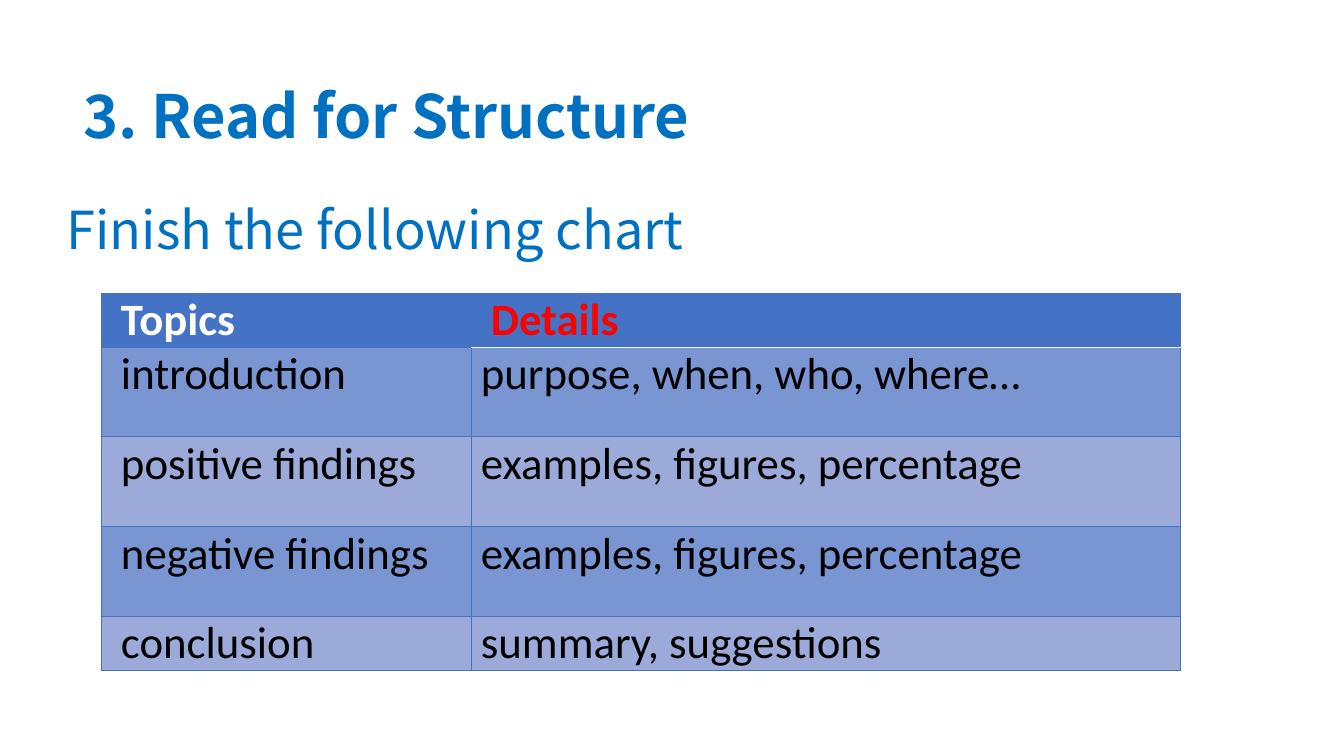
import pptx
import pptx.dml.color
import pptx.enum.text
import pptx.oxml.ns
import pptx.util
from lxml import etree

Inches = pptx.util.Inches
Pt = pptx.util.Pt
Align = pptx.enum.text.PP_ALIGN
Anchor = pptx.enum.text.MSO_ANCHOR

COLORS = {
    "heading": "0070C0",
    "header": "4472C4",
    "dark_row": "7995D2",
    "light_row": "9BAAD9",
    "white": "FFFFFF",
    "black": "000000",
    "red": "FF0000",
}
HEADING_FONT = "Noto Sans CJK SC"
TABLE_FONT = "Calibri"
ROWS = [
    ("Topics", "Details"),
    ("introduction", "purpose, when, who, where…"),
    ("positive findings", "examples, figures, percentage"),
    ("negative findings", "examples, figures, percentage"),
    ("conclusion", "summary, suggestions"),
]
COLUMN_WIDTHS = (3.67, 7.04)
ROW_HEIGHTS = (0.53, 0.89, 0.89, 0.89, 0.53)


def color(name):
    """Return the named colour."""
    return pptx.dml.color.RGBColor.from_string(COLORS[name])


def write(frame, text, font, size, color_name, bold, align):
    """Fill a text frame with one formatted paragraph and return it."""
    frame.text = text
    para = frame.paragraphs[0]
    para.alignment = align
    span = para.runs[0]
    span.font.name = font
    span.font.size = Pt(size)
    span.font.bold = bold
    span.font.color.rgb = color(color_name)
    return para


def add_heading(page):
    """Place and format the slide title."""
    title = page.shapes.title
    title.left, title.top = Inches(0.73), Inches(0.73)
    title.width, title.height = Inches(9.87), Inches(0.82)
    frame = title.text_frame
    frame.vertical_anchor = Anchor.MIDDLE
    para = write(frame, "3. Read for Structure", HEADING_FONT, 42.6, "heading", True, Align.LEFT)
    para.space_before = Pt(0)


def add_instruction(page):
    """Add the task line under the title."""
    box = page.shapes.add_textbox(Inches(-0.26), Inches(1.97), Inches(12.49), Inches(0.66))
    frame = box.text_frame
    frame.word_wrap = True
    frame.margin_left = Inches(0.92)
    para = write(frame, "Finish the following chart", HEADING_FONT, 37.4, "heading", False, Align.LEFT)
    para.line_spacing = Pt(40)
    para.space_before = Pt(6)


def add_border(cell, side, color_name, width):
    """Draw one side of a cell's border."""
    qn = pptx.oxml.ns.qn
    properties = cell._tc.get_or_add_tcPr()
    line = etree.SubElement(properties, qn(f"a:ln{side}"), w=str(Pt(width)))
    fill = etree.SubElement(line, qn("a:solidFill"))
    etree.SubElement(fill, qn("a:srgbClr"), val=COLORS[color_name])


def format_cell(cell, row, column):
    """Write a table cell and set its margins, borders and fill."""
    is_header = row == 0
    text_color = ("white", "red")[column] if is_header else "black"
    write(cell.text_frame, ROWS[row][column], TABLE_FONT, 32, text_color, is_header, Align.JUSTIFY)
    cell.margin_left = Inches(0.2 if is_header or column == 0 else 0.1)
    cell.margin_right = Inches(0.1)
    cell.margin_top = cell.margin_bottom = 0
    white_side = {0: "B", 1: "T"}.get(row) if column == 1 else None
    for side in "LRTB":
        style = ("white", 1) if side == white_side else ("header", 0.5)
        add_border(cell, side, *style)
    cell.fill.solid()
    row_color = "dark_row" if row % 2 else "light_row"
    cell.fill.fore_color.rgb = color("header" if is_header else row_color)


def add_structure_table(page):
    """Add the table of topics and details."""
    frame = page.shapes.add_table(
        len(ROWS), len(COLUMN_WIDTHS), Inches(1), Inches(2.91),
        Inches(sum(COLUMN_WIDTHS)), Inches(sum(ROW_HEIGHTS)))
    table = frame.table
    for column, width in enumerate(COLUMN_WIDTHS):
        table.columns[column].width = Inches(width)
    for row, height in enumerate(ROW_HEIGHTS):
        table.rows[row].height = Inches(height)
        for column in range(len(COLUMN_WIDTHS)):
            format_cell(table.cell(row, column), row, column)


def main():
    """Build the slide and save the deck."""
    deck = pptx.Presentation()
    deck.slide_width, deck.slide_height = Inches(13.33), Inches(7.5)
    page = deck.slides.add_slide(deck.slide_layouts[5])
    add_heading(page)
    add_instruction(page)
    add_structure_table(page)
    deck.save("out.pptx")


if __name__ == "__main__":
    main()
